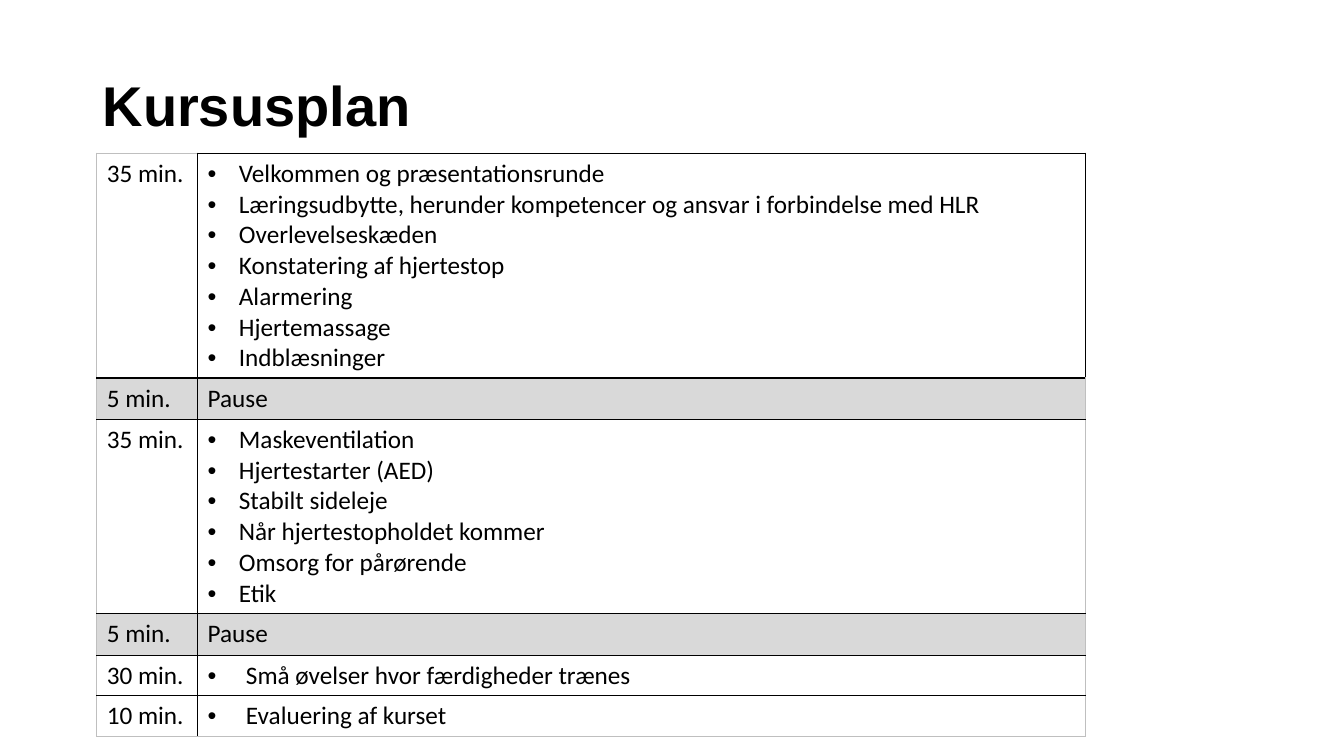
from lxml.etree import SubElement
from pptx import Presentation
from pptx.dml.color import RGBColor
from pptx.enum.text import MSO_ANCHOR
from pptx.oxml.ns import qn
from pptx.util import Inches, Pt

BLACK, WHITE, PAUSE_GREY, EDGE_GREY = "000000", "FFFFFF", "D9D9D9", "BFBFBF"
PAUSE = ["Pause"]

# Duration, activities, row height and bullet indent (0 for plain text)
PLAN = [
    ("35 min.", ["Velkommen og præsentationsrunde",
                 "Læringsudbytte, herunder kompetencer og ansvar i forbindelse med HLR",
                 "Overlevelseskæden", "Konstatering af hjertestop", "Alarmering",
                 "Hjertemassage", "Indblæsninger"], 2.23, 0.31),
    ("5 min.", PAUSE, 0.41, 0),
    ("35 min.", ["Maskeventilation", "Hjertestarter (AED)", "Stabilt sideleje",
                 "Når hjertestopholdet kommer", "Omsorg for pårørende", "Etik"], 1.93, 0.31),
    ("5 min.", PAUSE, 0.41, 0),
    ("30 min.", ["Små øvelser hvor færdigheder trænes"], 0.4, 0.38),
    ("10 min.", ["Evaluering af kurset"], 0.41, 0.38),
]


def color(hex_code):
    return RGBColor.from_string(hex_code)


def add_text(paragraph, text, size, font, bold=False):
    run = paragraph.add_run()
    run.text = text
    run.font.size = Pt(size)
    run.font.name = font
    run.font.bold = bold
    run.font.color.rgb = color(BLACK)


def add_bullet(paragraph, indent):
    properties = paragraph._p.get_or_add_pPr()
    properties.set("marL", str(Inches(indent)))
    properties.set("indent", str(-Inches(indent)))
    SubElement(properties, qn("a:buFont"), typeface="Arial")
    SubElement(properties, qn("a:buChar"), char="•")


def set_borders(cell, edges):
    """Draw one-point borders; edges maps L, R, T and B to colours."""
    properties = cell._tc.get_or_add_tcPr()
    for side, hex_code in edges.items():
        line = SubElement(properties, qn(f"a:ln{side}"), w=str(Pt(1)))
        fill = SubElement(line, qn("a:solidFill"))
        SubElement(fill, qn("a:srgbClr"), val=hex_code)


def fill_cell(cell, lines, indent, background, edges):
    set_borders(cell, edges)
    cell.fill.solid()
    cell.fill.fore_color.rgb = color(background)
    frame = cell.text_frame
    for number, line in enumerate(lines):
        paragraph = frame.add_paragraph() if number else frame.paragraphs[0]
        if indent:
            add_bullet(paragraph, indent)
        add_text(paragraph, line, 18, "Calibri")


def add_title(slide, left, top, width, height):
    box = slide.shapes.add_textbox(Inches(left), Inches(top), Inches(width), Inches(height))
    frame = box.text_frame
    frame.word_wrap = True
    frame.vertical_anchor = MSO_ANCHOR.MIDDLE
    heading = frame.paragraphs[0]
    heading.line_spacing = 0.9
    add_text(heading, "Kursusplan", 40, "Arial", bold=True)


def add_plan(slide, left, top, width, height):
    time_width = 1
    plan = slide.shapes.add_table(len(PLAN), 2, Inches(left), Inches(top),
                                  Inches(width), Inches(height)).table
    plan.first_row = plan.horz_banding = False
    plan.columns[0].width = Inches(time_width)
    plan.columns[1].width = Inches(width - time_width)
    last = len(PLAN) - 1
    for row, (duration, activities, row_height, indent) in enumerate(PLAN):
        plan.rows[row].height = Inches(row_height)
        background = PAUSE_GREY if activities is PAUSE else WHITE
        bottom = EDGE_GREY if row == last else BLACK
        time_edges = {"L": EDGE_GREY, "R": BLACK,
                      "T": BLACK if row else EDGE_GREY, "B": bottom}
        activity_edges = {"L": BLACK, "R": EDGE_GREY if row else BLACK,
                          "T": BLACK, "B": bottom}
        fill_cell(plan.cell(row, 0), [duration], 0, background, time_edges)
        fill_cell(plan.cell(row, 1), activities, indent, background, activity_edges)


def main():
    deck = Presentation()
    deck.slide_width, deck.slide_height = Inches(13.33), Inches(7.5)
    slide = deck.slides.add_slide(deck.slide_layouts[6])
    add_title(slide, 0.92, 0.71, 8.97, 0.73)
    add_plan(slide, 0.96, 1.52, 9.81, sum(row[2] for row in PLAN))
    deck.save("out.pptx")


if __name__ == "__main__":
    main()
